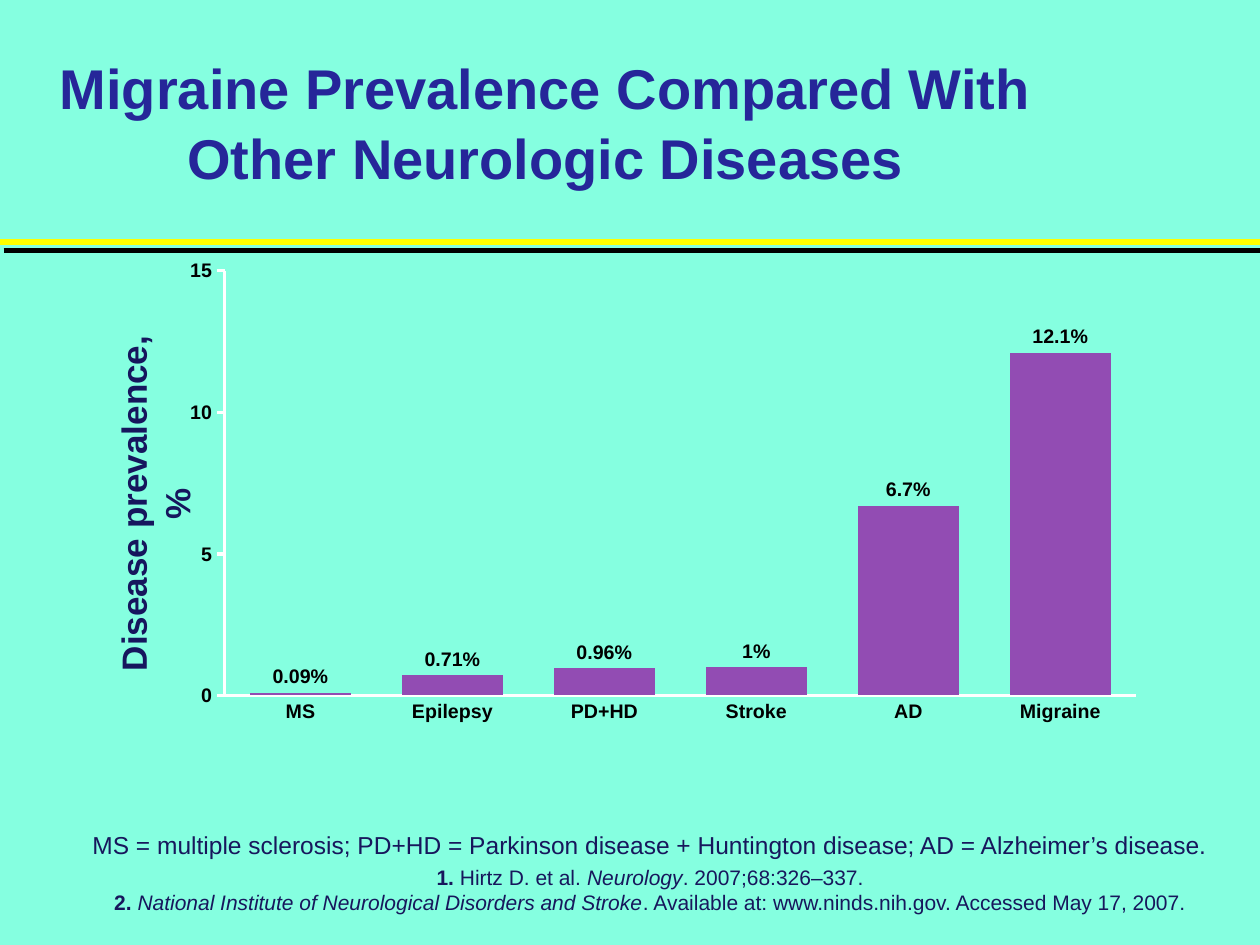
from lxml import etree
from pptx import Presentation
from pptx.chart.data import CategoryChartData
from pptx.dml.color import RGBColor
from pptx.enum.chart import XL_CHART_TYPE, XL_LABEL_POSITION, XL_TICK_MARK
from pptx.enum.shapes import MSO_CONNECTOR
from pptx.enum.text import MSO_ANCHOR, PP_ALIGN
from pptx.oxml import parse_xml
from pptx.oxml.ns import nsdecls, qn
from pptx.util import Pt

COLUMNS = XL_CHART_TYPE.COLUMN_CLUSTERED
LABEL_OUTSIDE = XL_LABEL_POSITION.OUTSIDE_END
TICK_NONE, TICK_OUT = XL_TICK_MARK.NONE, XL_TICK_MARK.OUTSIDE
STRAIGHT = MSO_CONNECTOR.STRAIGHT
TOP, MIDDLE, BOTTOM = MSO_ANCHOR.TOP, MSO_ANCHOR.MIDDLE, MSO_ANCHOR.BOTTOM
CENTER = PP_ALIGN.CENTER

# Content
TITLE = "Migraine Prevalence Compared With Other Neurologic Diseases"
AXIS_TITLE = "Disease prevalence, %"
PREVALENCE = {"MS": 0.09, "Epilepsy": 0.71, "PD+HD": 0.96,
              "Stroke": 1, "AD": 6.7, "Migraine": 12.1}
# Each footnote is a list of (text, style) runs
FOOTNOTES = [
    [("MS = multiple sclerosis; PD+HD = Parkinson disease + Huntington disease; "
      "AD = Alzheimer’s disease.", "abbreviation")],
    [("1. ", "number"), ("Hirtz D. et al. ", "reference"),
     ("Neurology", "source"), (". 2007;68:326–337.", "reference")],
    [("2. ", "number"),
     ("National Institute of Neurological Disorders and Stroke", "source"),
     (". Available at: www.ninds.nih.gov. Accessed May 17, 2007.", "reference")],
]


def color(value):
    return RGBColor.from_string(value)


# Theme
INK = color("17175C")
THEME = {
    "background": color("85FFE0"), "rule": color("FFFF00"),
    "column": color("924CB3"), "axis": color("FFFFFF"),
    "title": {"size": Pt(32), "bold": True, "color": color("262699")},
    "axis title": {"size": Pt(20), "bold": True, "color": color("16165D")},
    "chart": {"size": Pt(11.2), "bold": True, "color": color("000000")},
    "abbreviation": {"size": Pt(14), "color": INK},
    "number": {"size": Pt(12), "bold": True, "color": INK},
    "reference": {"size": Pt(12), "color": INK},
    "source": {"size": Pt(12), "italic": True, "color": INK},
}

# Layout in points: left, top, width, height
SLIDE_WIDTH, SLIDE_HEIGHT = 720, 540
RULE_TOP = 138.24
TITLE_BOX = (5.76, 23.76, 612, 90)
CHART_BOX = (86.4, 128.88, 573.84, 318.96)
FOOTNOTE_BOX = (19.44, 480.96, 704.16, 41.76)
AXIS_TITLE_BOX = (-39.6, 272.16, 228.96, 30.96)
PLOT = {"x": 0.073, "y": 0.081, "w": 0.908, "h": 0.761}


def style_font(font, style):
    for name, value in {"name": "Arial", **THEME[style]}.items():
        if name == "color":
            font.color.rgb = value
        else:
            setattr(font, name, value)


def add_text(slide, box, paragraphs, anchor, insets=(7.2, 3.6), spacing=1.0):
    shape = slide.shapes.add_textbox(*map(Pt, box))
    frame = shape.text_frame
    across, down = map(Pt, insets)
    frame_format = {"word_wrap": True, "vertical_anchor": anchor,
                    "margin_left": across, "margin_right": across,
                    "margin_top": down, "margin_bottom": down}
    for name, value in frame_format.items():
        setattr(frame, name, value)
    for index, runs in enumerate(paragraphs):
        paragraph = frame.add_paragraph() if index else frame.paragraphs[0]
        paragraph.alignment = CENTER
        paragraph.line_spacing = spacing
        for text, style in runs:
            run = paragraph.add_run()
            run.text = text
            style_font(run.font, style)
    return shape


def add_rule(slide):
    rule = slide.shapes.add_connector(
        STRAIGHT, Pt(0), Pt(RULE_TOP), Pt(SLIDE_WIDTH), Pt(RULE_TOP))
    rule.line.color.rgb = THEME["rule"]
    rule.line.width = Pt(3)
    # Hard black shadow, 5.4 pt away at 68 degrees
    rule._element.spPr.append(parse_xml(
        f'<a:effectLst {nsdecls("a")}><a:outerShdw dist="{Pt(5.4)}" dir="{68 * 60000}" '
        'algn="ctr" rotWithShape="0"><a:srgbClr val="000000"/></a:outerShdw></a:effectLst>'))


def place_plot(chart):
    plot_area = chart._chartSpace.chart.plotArea
    for old in plot_area.findall(qn("c:layout")):
        plot_area.remove(old)
    layout = etree.Element(qn("c:layout"))
    manual = etree.SubElement(layout, qn("c:manualLayout"))
    settings = {"layoutTarget": "inner", "xMode": "edge", "yMode": "edge", **PLOT}
    for name, value in settings.items():
        etree.SubElement(manual, qn(f"c:{name}")).set("val", str(value))
    plot_area.insert(0, layout)


def add_prevalence_chart(slide):
    data = CategoryChartData()
    data.categories = list(PREVALENCE)
    data.add_series("Series 1", list(PREVALENCE.values()))
    chart = slide.shapes.add_chart(COLUMNS, *map(Pt, CHART_BOX), data).chart
    chart.has_legend = chart.has_title = False
    style_font(chart.font, "chart")

    # Columns and their labels
    plot = chart.plots[0]
    plot.gap_width, plot.vary_by_categories = 50, False
    fill = plot.series[0].format.fill
    fill.solid()
    fill.fore_color.rgb = THEME["column"]
    labels = plot.series[0].data_labels
    label_format = {"show_value": True, "number_format": 'General"%"',
                    "number_format_is_linked": False, "position": LABEL_OUTSIDE}
    for name, value in label_format.items():
        setattr(labels, name, value)
    style_font(labels.font, "chart")

    # Axes
    value_axis = chart.value_axis
    value_axis.minimum_scale, value_axis.maximum_scale = 0, 15
    value_axis.major_unit = 5
    for axis, tick in ((chart.category_axis, TICK_NONE), (value_axis, TICK_OUT)):
        axis.has_major_gridlines = False
        axis.major_tick_mark, axis.minor_tick_mark = tick, TICK_NONE
        axis.format.line.color.rgb = THEME["axis"]
        axis.format.line.width = Pt(2)
        style_font(axis.tick_labels.font, "chart")
    place_plot(chart)


def main():
    presentation = Presentation()
    presentation.slide_width = Pt(SLIDE_WIDTH)
    presentation.slide_height = Pt(SLIDE_HEIGHT)
    slide = presentation.slides.add_slide(presentation.slide_layouts[6])
    slide.background.fill.solid()
    slide.background.fill.fore_color.rgb = THEME["background"]

    add_rule(slide)
    add_text(slide, TITLE_BOX, [[(TITLE, "title")]], MIDDLE, spacing=1.04)
    add_prevalence_chart(slide)

    # Footnotes, with a hanging indent
    footnotes = add_text(slide, FOOTNOTE_BOX, FOOTNOTES, BOTTOM, insets=(0, 0))
    paragraphs = footnotes.text_frame.paragraphs
    for paragraph in paragraphs:
        properties = paragraph._p.get_or_add_pPr()
        properties.set("marL", str(Pt(36)))
        properties.set("indent", str(-Pt(36)))
    paragraphs[1].space_before = Pt(3)

    # Value axis title, reading upwards
    axis_title = add_text(slide, AXIS_TITLE_BOX, [[(AXIS_TITLE, "axis title")]],
                          TOP, spacing=1.04)
    axis_title.rotation = 270

    presentation.save("out.pptx")


if __name__ == "__main__":
    main()
